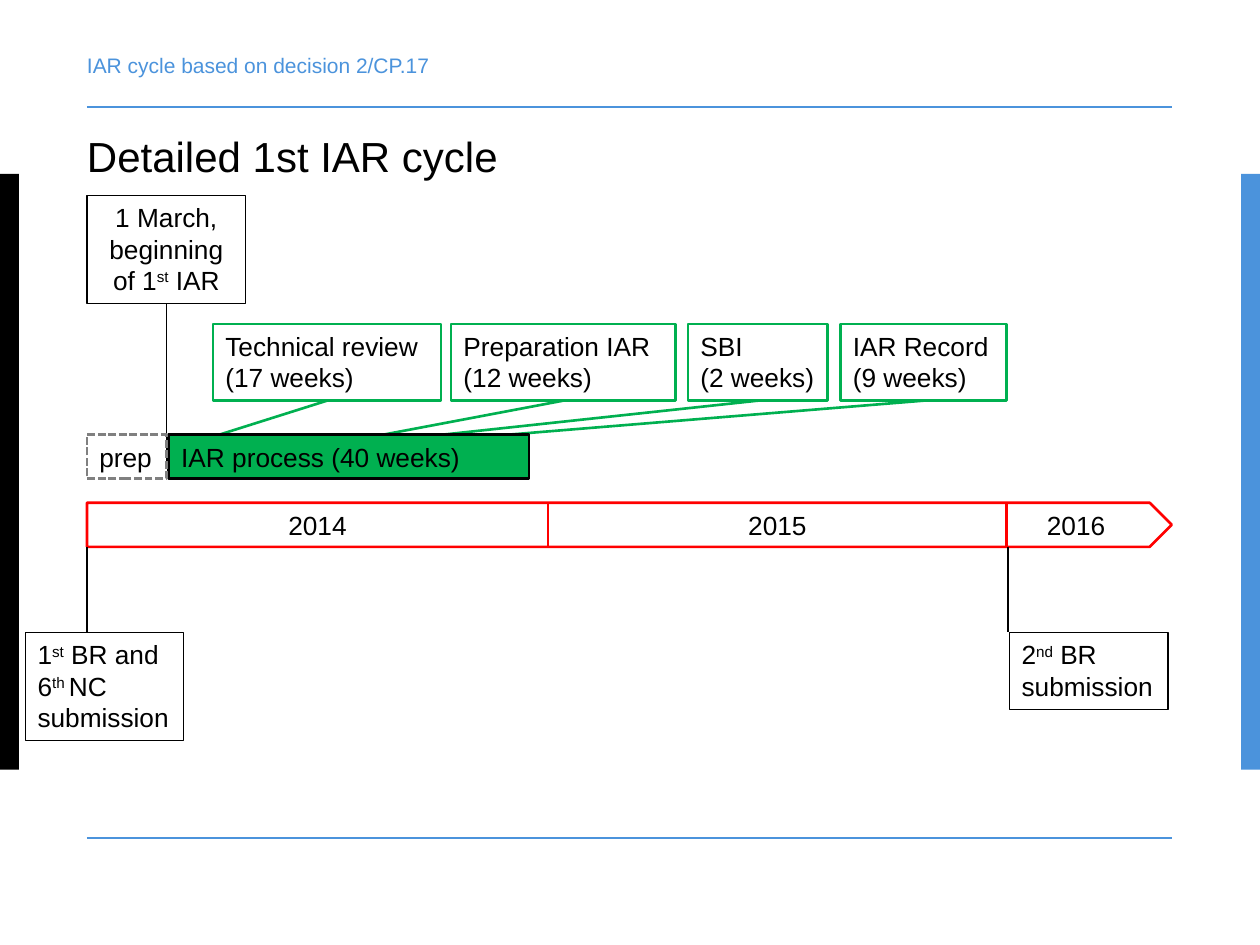
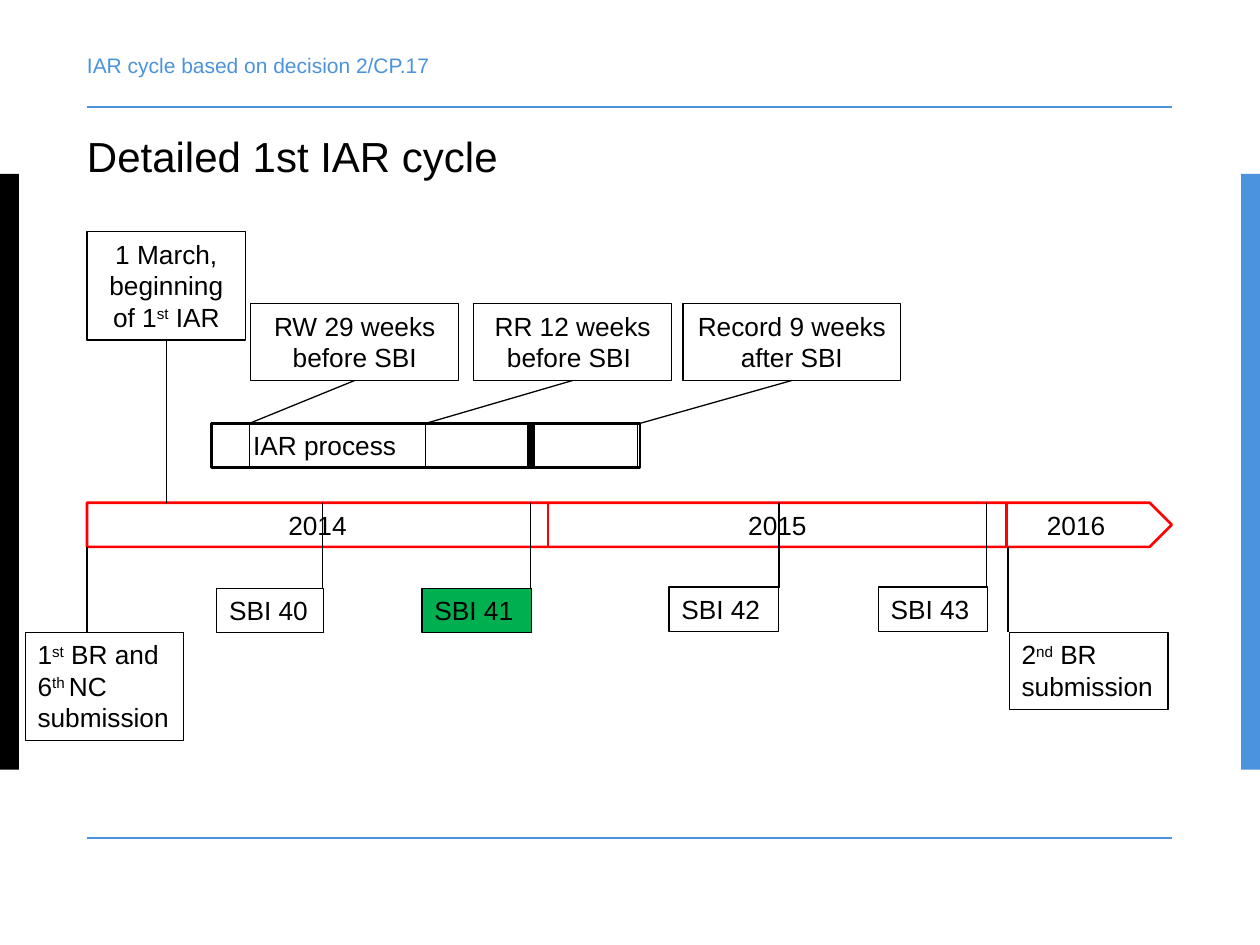
import pptx
import pptx.dml.color
import pptx.enum.dml
import pptx.enum.shapes
import pptx.enum.text
import pptx.oxml.ns
import pptx.util
from lxml import etree

Inches = pptx.util.Inches
RGBColor = pptx.dml.color.RGBColor
ShapeType = pptx.enum.shapes.MSO_SHAPE
Align = pptx.enum.text.PP_ALIGN
Anchor = pptx.enum.text.MSO_ANCHOR

BLACK = RGBColor(0x00, 0x00, 0x00)
BLUE = RGBColor(0x4B, 0x93, 0xDC)
GREEN = RGBColor(0x00, 0xB0, 0x50)
RED = RGBColor(0xFF, 0x00, 0x00)
GRAY = RGBColor(0x80, 0x80, 0x80)

FONT = "Arial"
LEFT, RIGHT = 0.69, 9.3
CONTENT_WIDTH = RIGHT - LEFT
BAR_HEIGHT = 0.35
TIMELINE_TOP = 3.99
TIMELINE_BOTTOM = TIMELINE_TOP + BAR_HEIGHT
YEAR_STARTS = (LEFT, 4.35, 7.99)
MARCH_X = 1.32


def write_text(shape, text, size=15, color=BLACK, align=Align.LEFT, anchor=Anchor.TOP,
               inset=None, left_inset=None, line_spacing=None):
    """Write text in a shape; parts between ^ marks are superscript and a newline breaks the line."""
    frame = shape.text_frame
    frame.word_wrap = True
    frame.vertical_anchor = anchor
    if inset is not None:
        frame.margin_left = frame.margin_right = Inches(inset)
        frame.margin_top = frame.margin_bottom = Inches(inset)
    if left_inset is not None:
        frame.margin_left = Inches(left_inset)
    paragraph = frame.paragraphs[0]
    paragraph.alignment = align
    paragraph.space_before = pptx.util.Pt(0)
    if line_spacing:
        paragraph.line_spacing = pptx.util.Pt(line_spacing)
    for index, part in enumerate(text.split("^")):
        for line_number, words in enumerate(part.split("\n")):
            if line_number:
                paragraph.add_line_break()
            if not words:
                continue
            run = paragraph.add_run()
            run.text = words
            run.font.name = FONT
            run.font.size = pptx.util.Pt(size)
            run.font.color.rgb = color
            if index % 2:
                run.font._element.set("baseline", "30000")


def add_box(slide, left, top, width, height, text="", kind=ShapeType.RECTANGLE,
            fill=None, line=BLACK, line_width=0.75, dash=None, **text_format):
    """Add a preset shape with optional fill, outline and text."""
    box = slide.shapes.add_shape(kind, Inches(left), Inches(top), Inches(width), Inches(height))
    box.shadow.inherit = False
    if fill is None:
        box.fill.background()
    else:
        box.fill.solid()
        box.fill.fore_color.rgb = fill
    if line is None:
        box.line.fill.background()
    else:
        box.line.color.rgb = line
        box.line.width = pptx.util.Pt(line_width)
        if dash:
            box.line.dash_style = dash
    if text:
        write_text(box, text, **text_format)
    return box


def add_line(slide, start, end, color=BLACK, width=1.0, box=None):
    """Draw a straight line, ending at the bottom middle of a box if one is given."""
    connector = slide.shapes.add_connector(
        pptx.enum.shapes.MSO_CONNECTOR.STRAIGHT, *(Inches(value) for value in (*start, *end)))
    connector.line.color.rgb = color
    connector.line.width = pptx.util.Pt(width)
    etree.SubElement(connector._element.spPr, pptx.oxml.ns.qn("a:effectLst"))
    if box is not None:
        connector.end_connect(box, 2)
    return connector


def add_callout(slide, text, left, top, width, height, target,
                color=BLACK, line_width=0.75, align=Align.CENTER):
    """Add a label box with a line from a target point to its bottom middle."""
    box = add_box(slide, left, top, width, height, text,
                  line=color, line_width=line_width, align=align)
    add_line(slide, target, (left + width / 2, top + height), color, line_width, box)


def add_frame(slide):
    """Add the side bands, rules, running title and heading."""
    for left, color in ((0, BLACK), (9.85, BLUE)):
        add_box(slide, left, 1.38, 0.15, 4.73, fill=color, line=None)
    for top in (0.85, 6.65):
        add_line(slide, (LEFT, top), (RIGHT, top), BLUE)
    title = slide.shapes.title
    title.left, title.top = Inches(LEFT), Inches(0.34)
    title.width, title.height = Inches(CONTENT_WIDTH), Inches(0.34)
    write_text(title, "IAR cycle based on decision 2/CP.17", size=12, color=BLUE,
               anchor=Anchor.MIDDLE, inset=0, line_spacing=15)
    heading = slide.shapes.add_textbox(
        Inches(LEFT), Inches(0.99), Inches(CONTENT_WIDTH), Inches(0.63))
    write_text(heading, "Detailed 1st IAR cycle", size=24, inset=0, line_spacing=32)


def add_timeline(slide):
    """Add the year arrow and the two submission boxes below it."""
    year_ends = (*YEAR_STARTS[1:], 9.09)
    for year, (start, end) in enumerate(zip(YEAR_STARTS, year_ends), 2014):
        add_box(slide, start, TIMELINE_TOP, end - start, BAR_HEIGHT, str(year),
                line=None, align=Align.CENTER)
    add_box(slide, LEFT, TIMELINE_TOP, CONTENT_WIDTH, BAR_HEIGHT,
            kind=ShapeType.PENTAGON, line=RED, line_width=1.5)
    for start in YEAR_STARTS[1:]:
        add_line(slide, (start, TIMELINE_TOP), (start, TIMELINE_BOTTOM), RED, 1.5)
    submissions = (
        ("1^st^ BR and \n6^th ^NC submission", 0.2, 0.86, LEFT),
        ("2^nd^ BR submission", 8.01, 0.61, 8),
    )
    for text, left, height, line_x in submissions:
        add_box(slide, left, 5.02, 1.26, height, text)
        add_line(slide, (line_x, TIMELINE_BOTTOM), (line_x, 5.02))


def add_march_start(slide, top, line_end):
    """Add the label for the beginning of the cycle."""
    add_callout(slide, "1 March, beginning of 1^st^ IAR", LEFT, top, 1.26, 0.86,
                (MARCH_X, line_end))


def add_phases(slide):
    """Add the 40-week process bar and the labels of its four phases."""
    bar_top = 3.45
    add_march_start(slide, 1.55, 3.67)
    phases = (
        ("Technical review (17 weeks)", 1.69, 1.81, 1.74),
        ("Preparation IAR (12 weeks)", 3.58, 1.78, 3.04),
        ("SBI\n(2 weeks)", 5.46, 1.11, 3.51),
        ("IAR Record (9 weeks)", 6.67, 1.32, 4.03),
    )
    for text, left, width, target_x in phases:
        add_callout(slide, text, left, 2.57, width, 0.61, (target_x, bar_top),
                    color=GREEN, line_width=1.5, align=Align.LEFT)
    add_box(slide, 1.34, bar_top, 2.86, BAR_HEIGHT, "IAR process (40 weeks)",
            fill=GREEN, line_width=1.5)
    add_box(slide, LEFT, bar_top, 0.63, BAR_HEIGHT, "prep", line=GRAY, line_width=1.5,
            dash=pptx.enum.dml.MSO_LINE.SQUARE_DOT)


def add_sessions(slide):
    """Add the SBI sessions below the timeline."""
    sessions = (
        (1.72, 4.67, 0.85, 2.56, None),
        (3.35, 4.67, 0.87, 4.21, GREEN),
        (5.31, 4.66, 0.87, 6.18, None),
        (6.97, 4.66, 0.87, 7.83, None),
    )
    for number, (left, top, width, line_x, fill) in enumerate(sessions, 40):
        add_line(slide, (line_x, TIMELINE_TOP), (line_x, 4.67))
        add_box(slide, left, top, width, BAR_HEIGHT, f"SBI {number}", fill=fill)


def add_deadlines(slide):
    """Add the divided process bar and the labels of its deadlines."""
    bar_top = 3.36
    add_march_start(slide, 1.84, TIMELINE_TOP)
    add_box(slide, 4.19, bar_top, 0.05, BAR_HEIGHT, fill=BLACK)
    add_box(slide, 1.68, bar_top, 3.4, BAR_HEIGHT, "IAR process",
            line_width=1.5, left_inset=0.33)
    for left, width in ((4.24, 0.82), (3.38, 0.84), (1.98, 1.4)):
        add_box(slide, left, bar_top, width, BAR_HEIGHT)
    deadlines = (
        ("RW 29 weeks before SBI", 1.99, 1.65, 1.98),
        ("RR 12 weeks before SBI ", 3.76, 1.57, 3.38),
        ("Record 9 weeks after SBI", 5.42, 1.73, 5.08),
    )
    for text, left, width, target_x in deadlines:
        add_callout(slide, text, left, 2.41, width, 0.61, (target_x, bar_top))


def main():
    """Build both slides and save the presentation."""
    presentation = pptx.Presentation()
    presentation.slide_width, presentation.slide_height = Inches(10), Inches(7.5)
    for parts in ((add_phases,), (add_sessions, add_deadlines)):
        slide = presentation.slides.add_slide(presentation.slide_layouts[5])
        for add_part in (add_frame, add_timeline, *parts):
            add_part(slide)
    presentation.save("out.pptx")


if __name__ == "__main__":
    main()
